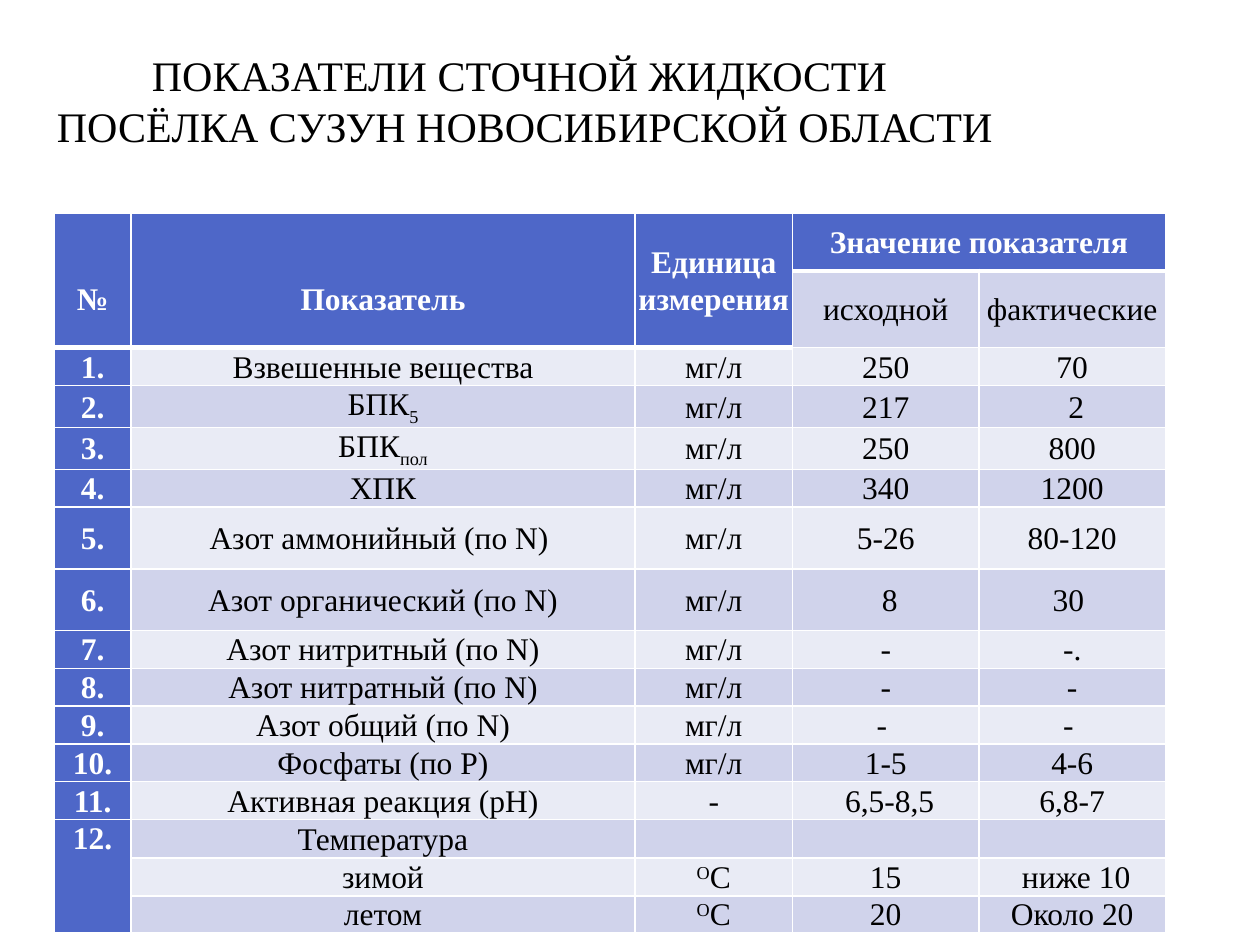
from lxml.etree import SubElement as Sub
from pptx import Presentation
from pptx.dml.color import RGBColor as RGB
from pptx.enum.text import MSO_ANCHOR as Anchor, MSO_AUTO_SIZE as Auto, PP_ALIGN as Align
from pptx.oxml.ns import qn
from pptx.util import Inches, Pt

BLUE = RGB(0x4E, 0x67, 0xC8)
DARK = RGB(0xD0, 0xD3, 0xEB)
LIGHT = RGB(0xE9, 0xEB, 0xF5)
WHITE = RGB(0xFF, 0xFF, 0xFF)
BLACK = RGB(0, 0, 0)

UNIT = "мг/л"
DEGREE = (("О", 30), ("С", 0))
COLS = [0.61, 4, 1.25, 1.48, 1.48]
TALL = {0: 0.46, 1: 0.61, 6: 0.49, 7: 0.49, 15: 0.28}
ROWS = [
    ["№", "Показатель", "Единица измерения", "Значение показателя", ""],
    ["", "", "", "исходной", "фактические"],
    ["1.", "Взвешенные вещества", UNIT, "250", "70"],
    ["2.", (("БПК", 0), ("5", -25)), UNIT, "217", " 2"],
    ["3.", (("БПК", 0), ("пол", -25)), UNIT, "250", "800"],
    ["4.", "ХПК", UNIT, "340", "1200"],
    ["5.", "Азот аммонийный (по N) ", UNIT, "5-26", "80-120"],
    ["6.", "Азот органический (по N)", UNIT, " 8", "30 "],
    ["7.", "Азот нитритный (по N)", UNIT, "-", "-."],
    ["8.", "Азот нитратный (по N)", UNIT, "-", "-"],
    ["9.", "Азот общий (по N)", UNIT, "- ", "- "],
    ["10.", "Фосфаты (по Р)", UNIT, "1-5", "4-6"],
    ["11.", "Активная реакция (рН)", "-", " 6,5-8,5", "6,8-7"],
    ["12.", "Температура", "", "", ""],
    ["", "зимой", DEGREE, "15", " ниже 10"],
    ["", "летом", DEGREE, "20", "Около 20"],
]
SPANS = [(0, 0, 1, 0), (0, 1, 1, 1), (0, 2, 1, 2), (0, 3, 0, 4), (13, 0, 15, 0)]


class Deck:
    font = "Times New Roman"

    def __init__(self):
        self.prs = Presentation()
        self.prs.slide_width, self.prs.slide_height = Inches(10), Inches(7.5)
        self.slide = self.prs.slides.add_slide(self.prs.slide_layouts[5])

    def run(self, para, text, size, color, bold=False, base=0):
        run = para.add_run()
        run.text = text
        font = run.font
        font.name, font.size, font.bold = self.font, Pt(size), bold
        font.color.rgb = color
        if base:
            font._element.set("baseline", str(base * 1000))

    def title(self, lines, left, top, width, height):
        box = self.slide.shapes.title
        box.left, box.top = Inches(left), Inches(top)
        box.width, box.height = Inches(width), Inches(height)
        frame = box.text_frame
        frame.auto_size, frame.word_wrap = Auto.NONE, True
        frame.vertical_anchor = Anchor.MIDDLE
        para = frame.paragraphs[0]
        para.alignment = Align.CENTER
        for i, line in enumerate(lines):
            if i:
                para.add_line_break()
            self.run(para, line, 24, BLACK)

    def edges(self, cell, top, bottom):
        props = cell._tc.get_or_add_tcPr()
        for tag, width in (("lnL", 1), ("lnR", 1), ("lnT", top), ("lnB", bottom)):
            line = Sub(props, qn(f"a:{tag}"), w=str(Pt(width)))
            fill = Sub(line, qn("a:solidFill"))
            Sub(fill, qn("a:srgbClr"), val=str(WHITE))

    def cell(self, cell, text, row, col):
        head = row == 0 or col == 0 or (row == 1 and col < 3)
        last = 1 if col < 3 else 0
        self.edges(cell, 3 if row == last + 1 else 1, 3 if row in (0, last) else 1)
        cell.fill.solid()
        cell.fill.fore_color.rgb = BLUE if head else DARK if row % 2 else LIGHT
        cell.margin_left = cell.margin_right = Inches(0.02)
        cell.margin_top = Inches(0.3 if row == 0 and col < 2 else 0)
        cell.margin_bottom = 0
        cell.vertical_anchor = Anchor.TOP if text == "12." else Anchor.MIDDLE
        if not text:
            return
        para = cell.text_frame.paragraphs[0]
        para.alignment, para.line_spacing = Align.CENTER, 1.05
        parts = ((text, 0),) if isinstance(text, str) else text
        for part, base in parts:
            self.run(para, part, 18, WHITE if head else BLACK, head, base)

    def table(self, rows, left, top):
        tall = [TALL.get(i, 0.3) for i in range(len(rows))]
        table = self.slide.shapes.add_table(
            len(rows), len(COLS), Inches(left), Inches(top),
            Inches(sum(COLS)), Inches(sum(tall))).table
        for col, width in zip(table.columns, COLS):
            col.width = Inches(width)
        for row, height in zip(table.rows, tall):
            row.height = Inches(height)
        for r1, c1, r2, c2 in SPANS:
            table.cell(r1, c1).merge(table.cell(r2, c2))
        for r, row in enumerate(rows):
            for c, text in enumerate(row):
                self.cell(table.cell(r, c), text, r, c)


def main():
    deck = Deck()
    deck.title(["ПОКАЗАТЕЛИ СТОЧНОЙ ЖИДКОСТИ ",
                "ПОСЁЛКА СУЗУН НОВОСИБИРСКОЙ ОБЛАСТИ"], 0.03, 0.6, 8.27, 0.39)
    deck.table(ROWS, 0.43, 1.69)
    deck.prs.save("out.pptx")


if __name__ == "__main__":
    main()
